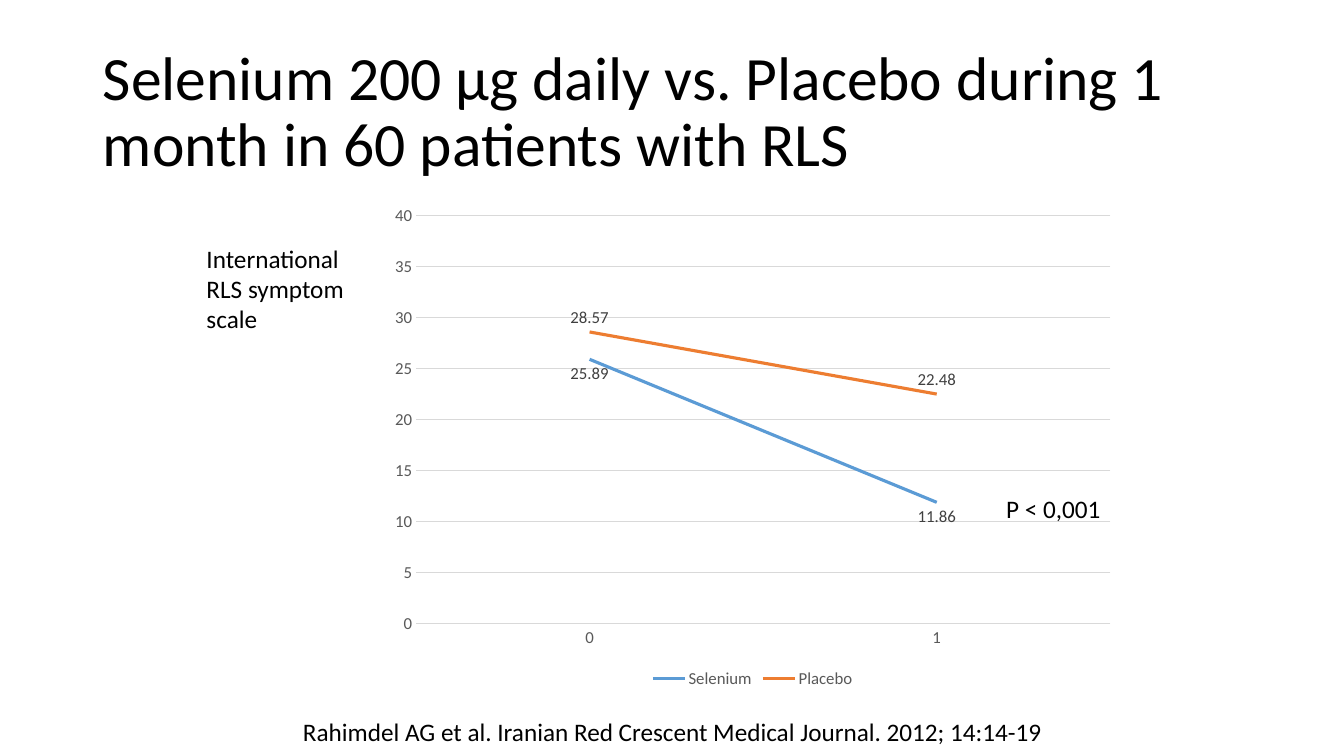
from dataclasses import dataclass

from pptx import Presentation
from pptx.chart.data import CategoryChartData
from pptx.dml.color import RGBColor
from pptx.enum.chart import XL_CHART_TYPE, XL_LABEL_POSITION, XL_LEGEND_POSITION, XL_MARKER_STYLE, XL_TICK_MARK
from pptx.enum.text import MSO_ANCHOR, MSO_AUTO_SIZE, PP_ALIGN
from pptx.util import Inches, Pt


@dataclass(frozen=True)
class Theme:
    font: str = "Calibri"
    text: str = "000000"
    axis: str = "595959"
    label: str = "404040"
    grid: str = "D9D9D9"
    selenium: str = "5B9BD5"
    placebo: str = "ED7D31"
    title_size: int = 44
    text_size: int = 18
    chart_size: int = 12


class SlideBuilder:
    def __init__(self, page, theme):
        self.page = page
        self.theme = theme

    def style_font(self, font, size, color):
        font.name = self.theme.font
        font.size = Pt(size)
        font.bold = False
        font.color.rgb = RGBColor.from_string(color)

    def style_line(self, line, color, width):
        line.color.rgb = RGBColor.from_string(color)
        line.width = Pt(width)

    def title(self, text, left, top, width, height):
        box = self.page.shapes.title
        box.left, box.top, box.width, box.height = map(Inches, (left, top, width, height))
        frame = box.text_frame
        frame.text = text
        frame.word_wrap = True
        frame.auto_size = MSO_AUTO_SIZE.NONE
        frame.vertical_anchor = MSO_ANCHOR.MIDDLE
        para = frame.paragraphs[0]
        para.alignment = PP_ALIGN.LEFT
        para.line_spacing = 0.9
        self.style_font(para.font, self.theme.title_size, self.theme.text)

    def text(self, text, left, top, width, height, align=PP_ALIGN.LEFT, wrap=True):
        box = self.page.shapes.add_textbox(*map(Inches, (left, top, width, height)))
        frame = box.text_frame
        frame.text = text
        frame.word_wrap = wrap
        frame.auto_size = MSO_AUTO_SIZE.SHAPE_TO_FIT_TEXT
        para = frame.paragraphs[0]
        para.alignment = align
        self.style_font(para.font, self.theme.text_size, self.theme.text)

    def line_chart(self, categories, series_rows, left, top, width, height):
        """Draw a line chart from rows of name, values, colour and label position."""
        data = CategoryChartData(number_format="General")
        data.categories = categories
        for name, values, _, _ in series_rows:
            data.add_series(name, values)
        chart = self.page.shapes.add_chart(
            XL_CHART_TYPE.LINE, *map(Inches, (left, top, width, height)), data
        ).chart
        theme = self.theme
        self.style_font(chart.font, theme.chart_size, theme.axis)
        chart.has_title = False
        chart.has_legend = True
        chart.legend.position = XL_LEGEND_POSITION.BOTTOM
        chart.legend.include_in_layout = False
        self.style_font(chart.legend.font, theme.chart_size, theme.axis)

        for axis in (chart.category_axis, chart.value_axis):
            axis.major_tick_mark = axis.minor_tick_mark = XL_TICK_MARK.NONE
            self.style_font(axis.tick_labels.font, theme.chart_size, theme.axis)
        self.style_line(chart.category_axis.format.line, theme.grid, 0.75)
        value_axis = chart.value_axis
        value_axis.minimum_scale, value_axis.maximum_scale = 0, 40
        value_axis.major_unit = 5
        value_axis.format.line.fill.background()
        value_axis.has_major_gridlines = True
        self.style_line(value_axis.major_gridlines.format.line, theme.grid, 0.75)

        plot = chart.plots[0]
        plot.vary_by_categories = False
        for series, (_, _, color, position) in zip(plot.series, series_rows):
            series.smooth = False
            series.marker.style = XL_MARKER_STYLE.NONE
            self.style_line(series.format.line, color, 2.25)
            labels = series.data_labels
            labels.show_value = True
            labels.position = position
            self.style_font(labels.font, theme.chart_size, theme.label)


def main():
    deck = Presentation()
    deck.slide_width, deck.slide_height = Inches(13.33), Inches(7.5)
    title_only = deck.slide_layouts[5]
    theme = Theme()
    slide = SlideBuilder(deck.slides.add_slide(title_only), theme)

    slide.line_chart(
        ["0", "1"],
        [
            ("Selenium", (25.89, 11.86), theme.selenium, XL_LABEL_POSITION.BELOW),
            ("Placebo", (28.57, 22.48), theme.placebo, XL_LABEL_POSITION.ABOVE),
        ],
        3.77, 1.94, 7.39, 4.93,
    )
    slide.title(
        "Selenium 200 µg daily vs. Placebo during 1 month in 60 patients with RLS",
        0.92, 0.4, 11.5, 1.45,
    )
    slide.text("International RLS symptom scale", 1.95, 2.36, 1.64, 1.01)
    slide.text("P < 0,001", 9.88, 4.84, 1.15, 0.4, wrap=False)
    slide.text(
        "Rahimdel AG et al. Iranian Red Crescent Medical Journal. 2012; 14:14-19",
        1.67, 7.06, 10, 0.4, align=PP_ALIGN.CENTER,
    )
    deck.save("out.pptx")


if __name__ == "__main__":
    main()
